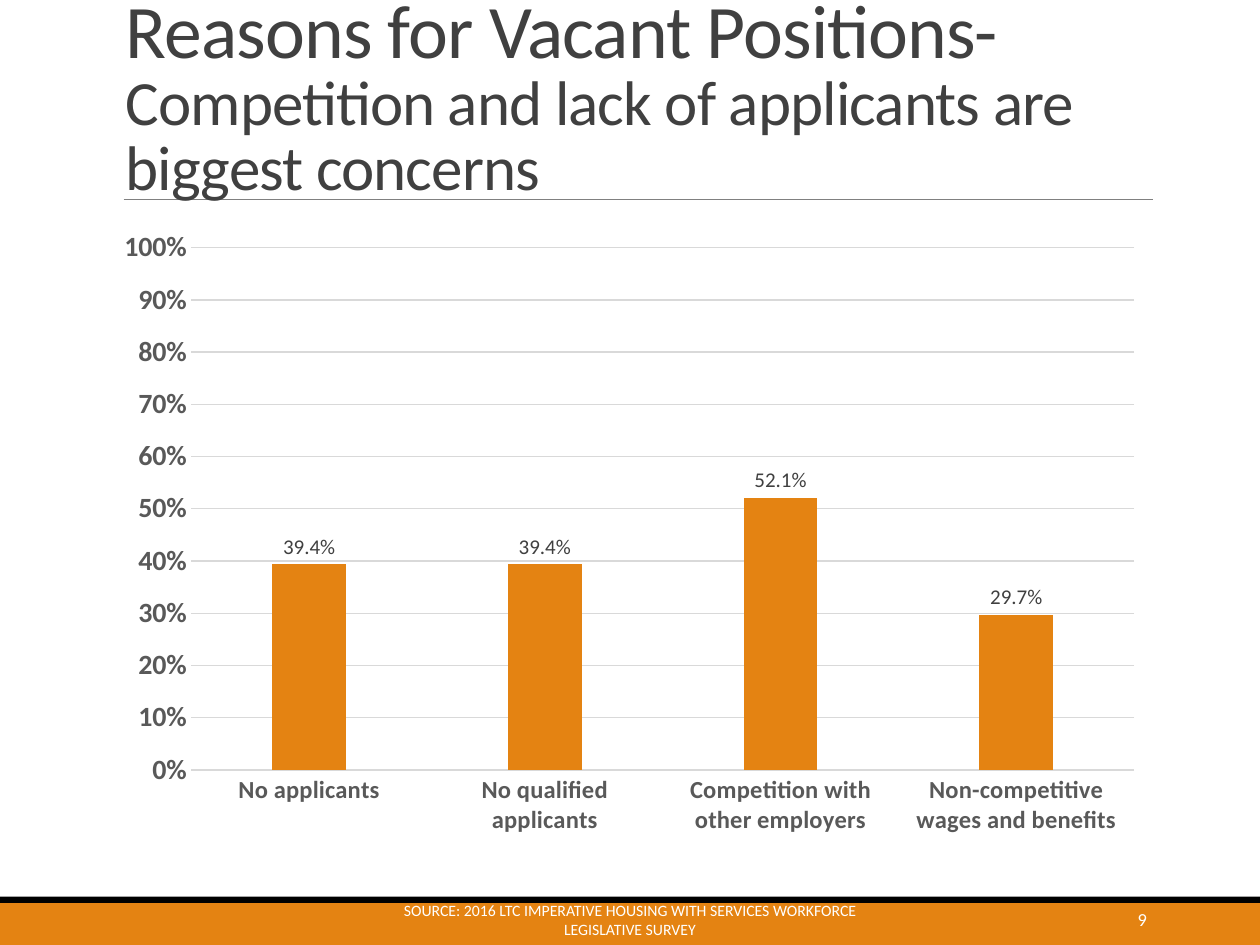
from lxml import etree
from pptx import Presentation
from pptx import util as u
from pptx.chart.data import CategoryChartData
from pptx.dml.color import RGBColor
from pptx.enum import chart as ch, shapes, text
from pptx.oxml import parse_xml
from pptx.oxml.ns import nsdecls, qn

Pt = u.Pt
ORANGE = RGBColor(0xE4, 0x83, 0x12)
BLACK = RGBColor(0, 0, 0)
WHITE = RGBColor(0xFF, 0xFF, 0xFF)
DARK = RGBColor(0x40, 0x40, 0x40)
MID = RGBColor(0x59, 0x59, 0x59)
RULE = RGBColor(0x80, 0x80, 0x80)
GRID = RGBColor(0xD9, 0xD9, 0xD9)
FACE = "Calibri"

REASONS = {
    "No applicants": 0.394,
    "No qualified applicants": 0.394,
    "Competition with other employers": 0.521,
    "Non-competitive wages and benefits": 0.297,
}


def style(font, size, color, bold=False):
    font.name, font.size, font.bold = FACE, Pt(size), bold
    font.color.rgb = color


def add_bar(slide, top, height, color):
    bar = slide.shapes.add_shape(
        shapes.MSO_SHAPE.RECTANGLE, 0, Pt(top), Pt(720), Pt(height))
    bar.shadow.inherit = False
    bar.fill.solid()
    bar.fill.fore_color.rgb = color
    bar.line.fill.background()


def add_rule(slide, left, right, y):
    rule = slide.shapes.add_connector(
        shapes.MSO_CONNECTOR.STRAIGHT, Pt(left), Pt(y), Pt(right), Pt(y))
    rule.line.color.rgb = RULE
    rule.line.width = Pt(0.5)
    etree.SubElement(rule.element.spPr, qn("a:effectLst"))


def add_text(slide, box, parts, color, anchor, align):
    """Add one paragraph made of (wording, size) parts."""
    frame = slide.shapes.add_textbox(*map(Pt, box)).text_frame
    frame.word_wrap = True
    frame.vertical_anchor = anchor
    para = frame.paragraphs[0]
    para.alignment = align
    for words, size in parts:
        run = para.add_run()
        run.text = words
        style(run.font, size, color)
    return para


def add_title(slide):
    para = add_text(
        slide, (64.8, 40.3, 594, 79.2),
        [("Reasons for Vacant Positions- ", 43.2),
         ("Competition and lack of applicants are biggest concerns", 36)],
        DARK, text.MSO_ANCHOR.BOTTOM, text.PP_ALIGN.LEFT)
    para.line_spacing = 0.85
    for run in para.runs:
        run.font._element.set("spc", "-50")


def set_plot(chart, x, y, w, h):
    """Fix the inner plot area as fractions of the chart."""
    area = chart._chartSpace.chart.plotArea
    for old in area.findall(qn("c:layout")):
        area.remove(old)
    sizes = "".join(f'<c:{tag} val="{val}"/>'
                    for tag, val in zip("xywh", (x, y, w, h)))
    area.insert(0, parse_xml(
        f'<c:layout {nsdecls("c")}><c:manualLayout>'
        '<c:layoutTarget val="inner"/><c:xMode val="edge"/>'
        f'<c:yMode val="edge"/>{sizes}</c:manualLayout></c:layout>'))


def set_axes(chart):
    cat, val = chart.category_axis, chart.value_axis
    for axis, size in ((cat, 14), (val, 16)):
        axis.major_tick_mark = axis.minor_tick_mark = ch.XL_TICK_MARK.NONE
        style(axis.tick_labels.font, size, MID, True)
    val.minimum_scale, val.maximum_scale, val.major_unit = 0, 1, 0.1
    val.tick_labels.number_format = "0%"
    val.tick_labels.number_format_is_linked = False
    val.format.line.fill.background()
    val.has_major_gridlines = True
    for line in (cat.format.line, val.major_gridlines.format.line):
        line.color.rgb = GRID
        line.width = Pt(0.75)


def add_chart(slide, box):
    data = CategoryChartData(number_format="0.0%")
    data.categories = list(REASONS)
    data.add_series("Series 1", list(REASONS.values()))
    chart = slide.shapes.add_chart(
        ch.XL_CHART_TYPE.COLUMN_CLUSTERED, *map(Pt, box), data).chart
    style(chart.font, 10, BLACK)
    chart.has_legend = chart.has_title = False
    set_axes(chart)
    set_plot(chart, 0.075, 0.025, 0.907, 0.845)

    plot = chart.plots[0]
    plot.gap_width, plot.overlap = 219, -27
    plot.vary_by_categories = False
    bars = plot.series[0]
    bars.format.fill.solid()
    bars.format.fill.fore_color.rgb = ORANGE
    tags = bars.data_labels
    tags.show_value = True
    tags.number_format, tags.number_format_is_linked = "0.0%", False
    tags.position = ch.XL_LABEL_POSITION.OUTSIDE_END
    style(tags.font, 12, DARK)


def main():
    deck = Presentation()
    deck.slide_width, deck.slide_height = Pt(720), Pt(540)
    slide = deck.slides.add_slide(deck.slide_layouts[6])
    add_bar(slide, 513.4, 26.6, ORANGE)
    add_bar(slide, 512.3, 3.6, BLACK)
    add_rule(slide, 70.6, 658.8, 113.8)
    add_title(slide)
    add_chart(slide, (64.8, 131.8, 594, 354.2))
    middle = text.MSO_ANCHOR.MIDDLE
    add_text(slide, (584.6, 513.4, 77.8, 23.8), [("9", 10.5)],
             WHITE, middle, text.PP_ALIGN.RIGHT)
    add_text(slide, (217.4, 513.4, 285.1, 23.8),
             [("SOURCE: 2016 LTC IMPERATIVE HOUSING WITH SERVICES "
               "WORKFORCE LEGISLATIVE SURVEY", 9)],
             WHITE, middle, text.PP_ALIGN.CENTER)
    deck.save("out.pptx")


if __name__ == "__main__":
    main()
